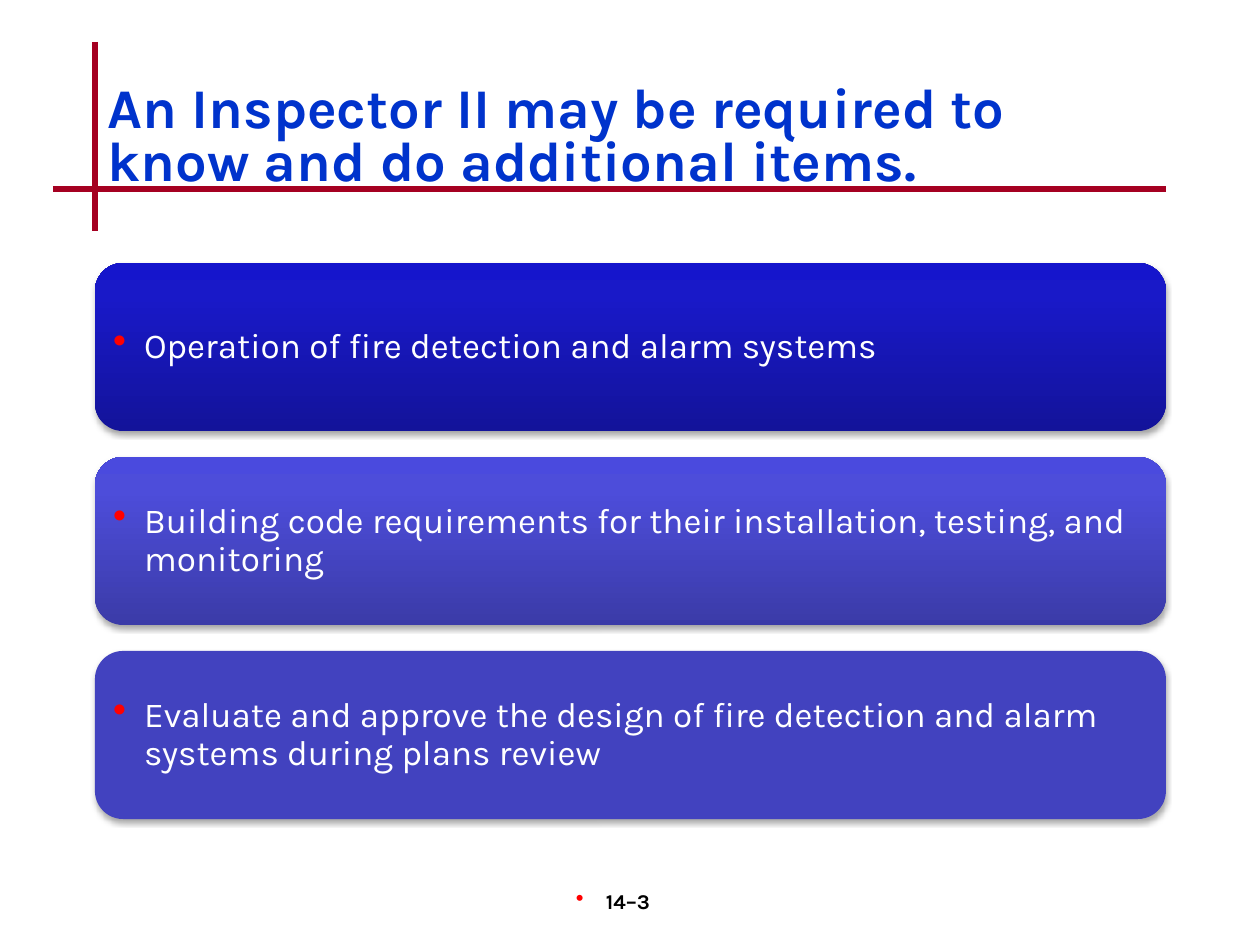
from dataclasses import dataclass
from copy import deepcopy

from lxml import etree
from pptx import Presentation
from pptx import util as u
from pptx.dml.color import RGBColor
from pptx.enum import shapes, text
from pptx.oxml import parse_xml
from pptx.oxml.ns import nsdecls, qn

PX = u.Inches(1) // 126


@dataclass(frozen=True)
class Theme:
    font: str = "Karla"
    title: str = "0033CC"
    rule: str = "A50021"
    bullet: str = "FF0000"
    panel_text: str = "FFFFFF"
    footer: str = "000000"
    title_size: int = 32
    panel_size: int = 20
    footer_size: int = 12
    rule_width: int = 3


THEME = Theme()

PANELS = [
    ("Operation of fire detection and alarm systems",
     [(0, "13139A"), (0.8, "1919C8"), (1, "1515CC")]),
    ("Building code requirements for their installation, testing, and monitoring",
     [(0, "3B3BA8"), (0.8, "4D4DDA"), (1, "4A4ADE")]),
    ("Evaluate and approve the design of fire detection and alarm systems during plans review",
     [(0, "4242BF")]),
]


def px(*lengths):
    return [length * PX for length in lengths]


def style(para, size, color, bold=False):
    for span in para.runs:
        span.font.name = THEME.font
        span.font.size = u.Pt(size)
        span.font.bold = bold
        span.font.color.rgb = RGBColor.from_string(color)


def add_bullet(para, indent, right=0):
    properties = para._p.get_or_add_pPr()
    for name, length in (("marL", indent), ("marR", right), ("indent", -indent)):
        properties.set(name, str(length * PX))
    for markup in (
        f'<a:buClr {nsdecls("a")}><a:srgbClr val="{THEME.bullet}"/></a:buClr>',
        f'<a:buSzPct {nsdecls("a")} val="110000"/>',
        f'<a:buChar {nsdecls("a")} char="•"/>',
    ):
        properties.append(parse_xml(markup))


def set_insets(frame, inset):
    frame.margin_left = frame.margin_right = inset * PX
    frame.margin_top = frame.margin_bottom = inset * PX


def add_title(page, words):
    title = page.shapes.title
    title.left, title.top, title.width, title.height = px(95, 73, 1071, 126)
    frame = title.text_frame
    frame.text = words
    frame.word_wrap = True
    frame.auto_size = text.MSO_AUTO_SIZE.NONE
    frame.vertical_anchor = text.MSO_ANCHOR.BOTTOM
    para = frame.paragraphs[0]
    para.alignment = text.PP_ALIGN.LEFT
    para.line_spacing = 0.8
    style(para, THEME.title_size, THEME.title, bold=True)


def add_rule(page, *ends):
    rule = page.shapes.add_connector(shapes.MSO_CONNECTOR.STRAIGHT, *px(*ends))
    rule.line.color.rgb = RGBColor.from_string(THEME.rule)
    rule.line.width = u.Pt(THEME.rule_width)
    etree.SubElement(rule._element.spPr, qn("a:effectLst"))


def fill_panel(panel, stops):
    if len(stops) == 1:
        panel.fill.solid()
        panel.fill.fore_color.rgb = RGBColor.from_string(stops[0][1])
        return
    panel.fill.gradient()
    panel.fill.gradient_angle = 90
    stop_list = panel._element.spPr.find(qn("a:gradFill")).find(qn("a:gsLst"))
    while len(stop_list) < len(stops):
        stop_list.append(deepcopy(stop_list[-1]))
    for stop, (position, color) in zip(panel.fill.gradient_stops, stops):
        stop.position = position
        stop.color.rgb = RGBColor.from_string(color)


def add_soft_shadow(panel):
    panel.shadow.inherit = False
    effects = panel._element.spPr.find(qn("a:effectLst"))
    effects.append(parse_xml(
        f'<a:outerShdw {nsdecls("a")} blurRad="{u.Pt(3.1)}" dist="{u.Pt(1.8)}" '
        'dir="5400000" rotWithShape="0"><a:srgbClr val="000000">'
        '<a:alpha val="35000"/></a:srgbClr></a:outerShdw>'))


def add_panel(page, top, words, stops):
    panel = page.shapes.add_shape(
        shapes.MSO_SHAPE.ROUNDED_RECTANGLE, *px(95, top, 1071, 168))
    fill_panel(panel, stops)
    panel.line.fill.background()
    add_soft_shadow(panel)
    frame = panel.text_frame
    frame.text = words
    frame.word_wrap = True
    frame.vertical_anchor = text.MSO_ANCHOR.MIDDLE
    set_insets(frame, 10)
    para = frame.paragraphs[0]
    para.alignment = text.PP_ALIGN.LEFT
    para.line_spacing = 0.9
    add_bullet(para, 31)
    style(para, THEME.panel_size, THEME.panel_text)


def add_page_label(page, words):
    box = page.shapes.add_textbox(*px(494, 882, 262, 63))
    frame = box.text_frame
    frame.text = words
    frame.word_wrap = True
    para = frame.paragraphs[0]
    para.alignment = text.PP_ALIGN.CENTER
    add_bullet(para, 30, right=24)
    style(para, THEME.footer_size, THEME.footer, bold=True)


def main():
    deck = Presentation()
    deck.slide_width, deck.slide_height = px(1260, 945)
    page = deck.slides.add_slide(deck.slide_layouts.get_by_name("Title Only"))
    add_rule(page, 95, 42, 95, 231)
    add_rule(page, 53, 189, 1166, 189)
    add_page_label(page, "14–3")
    add_title(page, "An Inspector II may be required to know and do additional items.")
    for row, (words, stops) in enumerate(PANELS):
        add_panel(page, 263 + row * 194, words, stops)
    deck.save("out.pptx")


if __name__ == "__main__":
    main()
